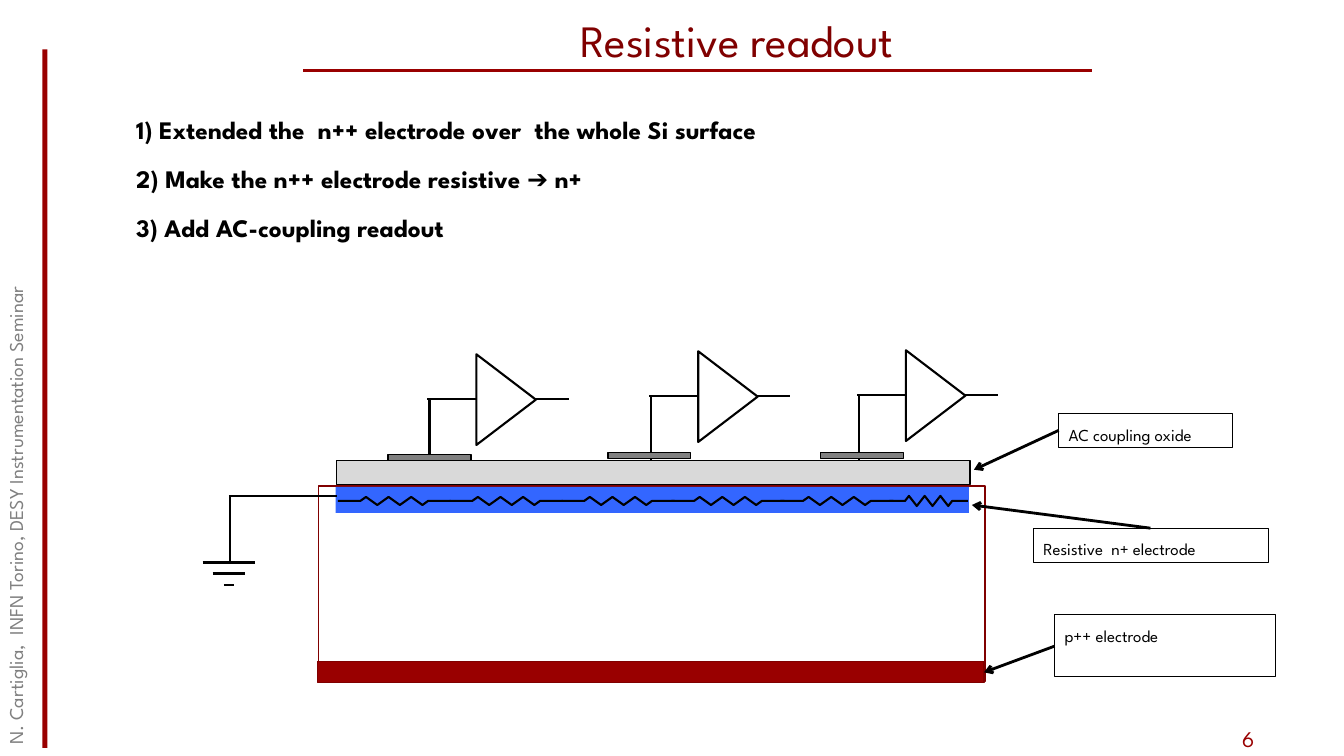
from pptx import Presentation, util as u
from pptx.dml.color import RGBColor
from pptx.enum import shapes as sh, text as t
from pptx.oxml.ns import qn
from lxml import etree

FONT = "League Spartan"
RED, MAROON, BLACK, WHITE = "990000", "800000", "000000", "FFFFFF"
BLUE, GREY, LIGHT, FOOTER = "3366FF", "808080", "D9D9D9", "808080"
ZIGZAG = [(0, 0), (20, 0), (25, -1), (35, 1), (45, -1), (55, 1),
          (65, -1), (75, 1), (80, 0), (100, 0)]


def px(n):
    """Length in EMU, at 100 px to the inch."""
    return u.Emu(int(n * 9144))


def rgb(hex_colour):
    return RGBColor.from_string(hex_colour)


def place(sp, x, y, w, h):
    sp.left, sp.top, sp.width, sp.height = map(px, (x, y, w, h))


def paint(sp, fill=None, line=None, width=1):
    if fill:
        sp.fill.solid()
        sp.fill.fore_color.rgb = rgb(fill)
    else:
        sp.fill.background()
    if line:
        sp.line.color.rgb = rgb(line)
        sp.line.width = u.Pt(width)
    else:
        sp.line.fill.background()
    sp.shadow.inherit = False


def box(s, x, y, w, h, fill=None, line=None, width=1, kind=sh.MSO_SHAPE.RECTANGLE):
    sp = s.shapes.add_shape(kind, *map(px, (x, y, w, h)))
    paint(sp, fill, line, width)
    return sp


def line(s, x1, y1, x2, y2, width=1.5, colour=BLACK, arrow=False):
    ln = s.shapes.add_connector(sh.MSO_CONNECTOR.STRAIGHT, *map(px, (x1, y1, x2, y2)))
    ln.line.color.rgb = rgb(colour)
    ln.line.width = u.Pt(width)
    if arrow:
        etree.SubElement(ln.line._get_or_add_ln(), qn("a:tailEnd"), type="arrow")
    etree.SubElement(ln._element.spPr, qn("a:effectLst"))


def write(sp, lines, size, colour, bold=False, spacing=None, gap=0, align=None, **frame):
    """Fill a shape with paragraphs; frame holds text frame attributes."""
    tf = sp.text_frame
    for name, value in {"word_wrap": True, **frame}.items():
        setattr(tf, name, value)
    for i, content in enumerate(lines):
        p = tf.paragraphs[0] if i == 0 else tf.add_paragraph()
        formats = {"alignment": align or t.PP_ALIGN.LEFT, "line_spacing": spacing,
                   "space_before": u.Pt(gap if i else 0), "space_after": u.Pt(0)}
        for name, value in formats.items():
            setattr(p, name, value)
        r = p.add_run()
        r.text = content
        for name, value in {"name": FONT, "size": u.Pt(size), "bold": bold}.items():
            setattr(r.font, name, value)
        r.font.color.rgb = rgb(colour)


def frame_parts(s):
    """Side bar, title rule, page number and vertical footer."""
    box(s, 42, 49, 5, 693, RED)
    line(s, 301, 70, 1083, 70, 2, RED)
    number = s.shapes.add_textbox(*map(px, (1222, 715, 81, 35)))
    write(number, ["6"], 16, RED, vertical_anchor=t.MSO_ANCHOR.MIDDLE)
    footer = s.shapes.add_textbox(*map(px, (-349, 363, 733, 38)))
    footer.rotation = 270
    write(footer, ["N. Cartiglia,  INFN Torino, DESY Instrumentation Seminar"], 14, FOOTER)


def headings(s):
    title, body = s.placeholders
    place(title, 129, -2, 1204, 73)
    write(title, ["Resistive readout"], 32, MAROON, align=t.PP_ALIGN.CENTER,
          vertical_anchor=t.MSO_ANCHOR.BOTTOM, auto_size=t.MSO_AUTO_SIZE.NONE,
          margin_top=px(4), margin_bottom=px(5))
    place(body, 125, 99, 1170, 134)
    write(body, ["1) Extended the  n++ electrode over  the whole Si surface",
                 "2) Make the n++ electrode resistive ➔ n+",
                 "3) Add AC-coupling readout"], 18, BLACK, True, 1.3, 7,
          vertical_anchor=t.MSO_ANCHOR.TOP, auto_size=t.MSO_AUTO_SIZE.NONE)
    for p in body.text_frame.paragraphs:
        pPr = p._p.get_or_add_pPr()
        pPr.set("marL", "0")
        pPr.set("indent", "0")
        etree.SubElement(pPr, qn("a:buNone"))


def amplifier(s, x, y):
    """Amplifier whose input wire bends at (x, y) and drops to its pad."""
    line(s, x + 2, y, x + 2, 474)
    line(s, x, y, x + 140, y)
    triangle = box(s, x + 33, y - 29, 90, 59, WHITE, BLACK, 1.5,
                   sh.MSO_SHAPE.ISOSCELES_TRIANGLE)
    triangle.rotation = 90


def resistor(s, x, y, w, h):
    """Zigzag along y, from x to x + w, swinging h each way."""
    points = [(px(x + w * along / 100), px(y + h * swing)) for along, swing in ZIGZAG]
    path = s.shapes.build_freeform(*points[0])
    path.add_line_segments(points[1:], close=False)
    paint(path.convert_to_shape(), line=BLACK, width=1.5)


def ground(s, x, y):
    """Wire from the electrode at (x, y) to the earth symbol."""
    line(s, x - 107, y, x, y)
    line(s, x - 106, y, x - 106, y + 65)
    for i, half in enumerate((26, 16, 5)):
        line(s, x - 107 - half, y + 66 + 11 * i, x - 107 + half, y + 66 + 11 * i)


def sensor(s, x, y, w, h):
    """Cross-section of the silicon sensor with its readout."""
    for pad_x, pad_y, pad_h in ((385, 480, 15), (603, 479, 15), (810, 479, 18)):
        box(s, pad_x, pad_y, 84, pad_h, BLUE)
    for pad_x, pad_y in ((387, 476), (605, 474), (811, 474)):
        box(s, pad_x, pad_y, 82, 6, GREY, BLACK)
    box(s, x, y, w, h, line=MAROON)
    box(s, x - 1, y + h - 20, w, 21, RED, MAROON)
    for amp_x, amp_y in ((424, 396), (644, 393), (850, 392)):
        amplifier(s, amp_x, amp_y)
    for pad_x, pad_y in ((385, 451), (603, 449), (814, 449)):
        box(s, pad_x, pad_y, 82, 6, GREY, BLACK)
    box(s, x + 18, y - 25, 628, 24, LIGHT, BLACK)
    box(s, x + 17, y + 1, 628, 26, BLUE)
    ground(s, x + 18, y + 10)
    for start in (335, 446, 557, 666, 774):
        resistor(s, start, y + 15, 112, 4)
    resistor(s, 882, y + 15, 78, 5)


def label(s, content, frame, arrow, wrap=True):
    sp = box(s, *frame, line=BLACK, width=0.75)
    write(sp, [content], 12, BLACK, spacing=1.3, word_wrap=wrap,
          vertical_anchor=t.MSO_ANCHOR.TOP, auto_size=t.MSO_AUTO_SIZE.SHAPE_TO_FIT_TEXT)
    line(s, *arrow, width=2, arrow=True)


def main():
    prs = Presentation()
    prs.slide_width, prs.slide_height = px(1333), px(750)
    s = prs.slides.add_slide(prs.slide_layouts[1])
    frame_parts(s)
    headings(s)
    sensor(s, 316, 482, 661, 194)
    label(s, "AC coupling oxide", (1050, 410, 172, 34), (1050, 427, 966, 466))
    label(s, "Resistive  n+ electrode", (1025, 524, 233, 34), (1141, 524, 964, 501))
    label(s, "p++ electrode", (1046, 610, 219, 61), (1046, 641, 976, 667), wrap=False)
    prs.save("out.pptx")


if __name__ == "__main__":
    main()
